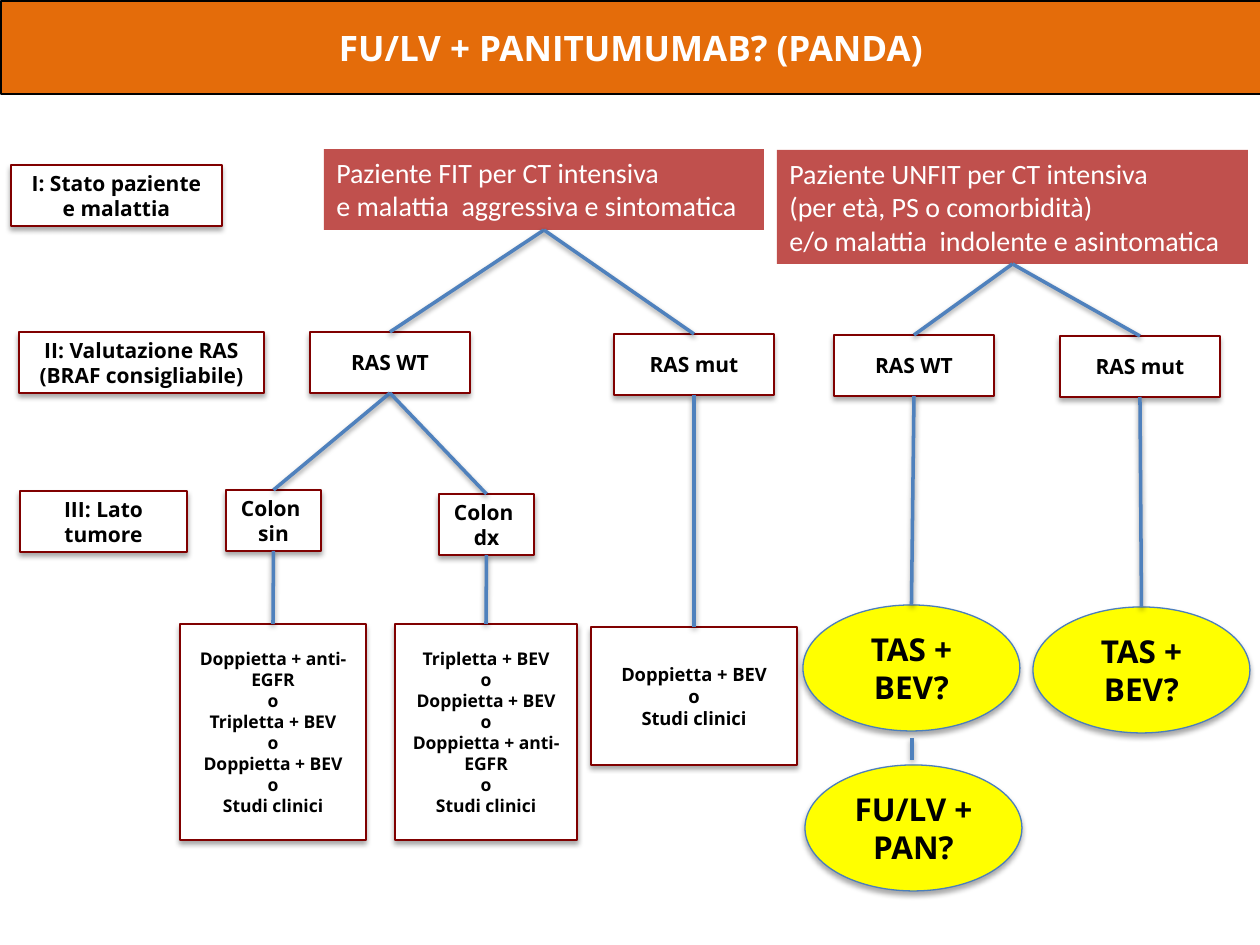
from lxml import etree
from pptx import Presentation
from pptx import util as u
from pptx.dml.color import RGBColor
from pptx.enum import shapes, text
from pptx.oxml.ns import qn

PX = u.Inches(1) / 126
COLORS = {
    "title": "E46C0A", "patient": "C0504D", "border": "800000",
    "link": "4F81BD", "drug": "FFFF00", "drug_line": "4B7EBC",
    "white": "FFFFFF", "black": "000000",
}
RECT = shapes.MSO_SHAPE.RECTANGLE
OVAL = shapes.MSO_SHAPE.OVAL
TOP, BOTTOM = 0, 2  # connection sites of a rectangle; TOP also fits an oval


def px(n):
    return u.Emu(round(n * PX))


def rgb(name):
    return RGBColor.from_string(COLORS[name])


def add_shadow(sp, alpha, dist):
    """Give a shape or connector a soft shadow straight below it."""
    sp_pr = sp._element.spPr
    effects = sp_pr.find(qn("a:effectLst"))
    if effects is None:
        effects = etree.SubElement(sp_pr, qn("a:effectLst"))
    shadow = etree.SubElement(
        effects, qn("a:outerShdw"), blurRad=str(u.Pt(3.1)),
        dist=str(u.Pt(dist)), dir="5400000", rotWithShape="0")
    color = etree.SubElement(shadow, qn("a:srgbClr"), val=COLORS["black"])
    etree.SubElement(color, qn("a:alpha"), val=str(alpha * 1000))


def write(sp, words, size=12, font="Open Sans", color="black", bold=True,
          align=text.PP_ALIGN.CENTER, anchor=text.MSO_ANCHOR.MIDDLE):
    tf = sp.text_frame
    tf.word_wrap = True
    tf.vertical_anchor = anchor
    for i, line in enumerate(words.split("\n")):
        p = tf.paragraphs[0] if i == 0 else tf.add_paragraph()
        p.alignment = align
        r = p.add_run()
        r.text = line
        r.font.size, r.font.name, r.font.bold = u.Pt(size), font, bold
        r.font.color.rgb = rgb(color)


def paint(sp, fill, line=None):
    sp.fill.solid()
    sp.fill.fore_color.rgb = rgb(fill)
    if line:
        sp.line.color.rgb = rgb(line)
        sp.line.width = u.Pt(0.75)
    else:
        sp.line.fill.background()


def add_node(slide, box, words, kind=RECT, fill="white", line="border",
             shadow=True, **fmt):
    sp = slide.shapes.add_shape(kind, *map(px, box))
    sp.shadow.inherit = False
    paint(sp, fill, line)
    if shadow:
        add_shadow(sp, 35, 1.8)
    write(sp, words, **fmt)
    return sp


def add_patient(slide, box, words):
    sp = add_node(slide, box, words, fill="patient", line=None, shadow=False,
                  size=16, font="Calibri", color="white", bold=False,
                  align=text.PP_ALIGN.LEFT, anchor=text.MSO_ANCHOR.TOP)
    sp.text_frame.auto_size = text.MSO_AUTO_SIZE.SHAPE_TO_FIT_TEXT
    return sp


def add_drug(slide, x, y, words):
    return add_node(slide, (x, y, 217, 126), words, kind=OVAL, fill="drug",
                    line="drug_line", size=18)


def add_line(slide, x1, y1, x2, y2):
    c = slide.shapes.add_connector(
        shapes.MSO_CONNECTOR.STRAIGHT, *map(px, (x1, y1, x2, y2)))
    c.line.color.rgb = rgb("link")
    c.line.width = u.Pt(2)
    add_shadow(c, 38, 1.6)
    return c


def link(slide, parent, *children):
    """Join the foot of the parent to the top of each child."""
    for child in children:
        c = add_line(slide, 0, 0, 0, 0)
        c.begin_connect(parent, BOTTOM)
        c.end_connect(child, TOP)


def add_title(slide, box, words):
    sp = slide.shapes.title
    sp.left, sp.top, sp.width, sp.height = map(px, box)
    paint(sp, "title", "black")
    write(sp, words, size=20, color="white")


def add_stages(slide, x, y):
    stages = [
        (0, 0, 211, "I: Stato paziente\ne malattia"),
        (8, 167, 245, "II: Valutazione RAS\n(BRAF consigliabile)"),
        (9, 326, 167, "III: Lato\ntumore"),
    ]
    for dx, dy, w, words in stages:
        add_node(slide, (x + dx, y + dy, w, 61), words)


def add_fit_branch(slide, x, y):
    patient = add_patient(
        slide, (x + 144, y, 440, 81),
        "Paziente FIT per CT intensiva\ne malattia  aggressiva e sintomatica")
    # RAS status
    wild = add_node(slide, (x + 130, y + 183, 160, 61), "RAS WT")
    mutant = add_node(slide, (x + 434, y + 185, 160, 61), "RAS mut")
    # Tumour side
    left = add_node(slide, (x + 46, y + 341, 95, 61), "Colon \nsin")
    right = add_node(slide, (x + 259, y + 345, 95, 61), "Colon \ndx")
    # Treatments
    mutant_care = add_node(
        slide, (x + 411, y + 478, 206, 138),
        "Doppietta + BEV\no\nStudi clinici", size=10.5)
    right_care = add_node(
        slide, (x + 215, y + 475, 182, 216),
        "Tripletta + BEV\no\nDoppietta + BEV\no\n"
        "Doppietta + anti-EGFR\no\nStudi clinici", size=10)
    left_care = add_node(
        slide, (x, y + 475, 186, 216),
        "Doppietta + anti-EGFR\no\nTripletta + BEV\no\n"
        "Doppietta + BEV\no\nStudi clinici", size=10)
    # Links
    link(slide, patient, wild, mutant)
    link(slide, wild, left, right)
    link(slide, left, left_care)
    link(slide, right, right_care)
    link(slide, mutant, mutant_care)


def add_unfit_branch(slide, x, y):
    patient = add_patient(
        slide, (x, y, 471, 114),
        "Paziente UNFIT per CT intensiva\n(per età, PS o comorbidità)\n"
        "e/o malattia  indolente e asintomatica")
    # RAS status
    wild = add_node(slide, (x + 57, y + 185, 160, 61), "RAS WT")
    mutant = add_node(slide, (x + 283, y + 186, 160, 61), "RAS mut")
    # Treatments
    wild_care = add_drug(slide, x + 26, y + 455, "TAS + BEV?")
    mutant_care = add_drug(slide, x + 256, y + 457, "TAS + BEV?")
    add_drug(slide, x + 28, y + 615, "FU/LV + PAN?")
    # Links
    link(slide, patient, wild, mutant)
    link(slide, wild, wild_care)
    link(slide, mutant, mutant_care)
    add_line(slide, x + 135, y + 588, x + 135, y + 610)


def main():
    prs = Presentation()
    prs.slide_width, prs.slide_height = u.Inches(10), u.Inches(7.5)
    slide = prs.slides.add_slide(prs.slide_layouts[5])
    add_title(slide, (1, 1, 1260, 93), "FU/LV + PANITUMUMAB? (PANDA)")
    add_stages(slide, 11, 165)
    add_fit_branch(slide, 180, 149)
    add_unfit_branch(slide, 777, 150)
    prs.save("out.pptx")


if __name__ == "__main__":
    main()
